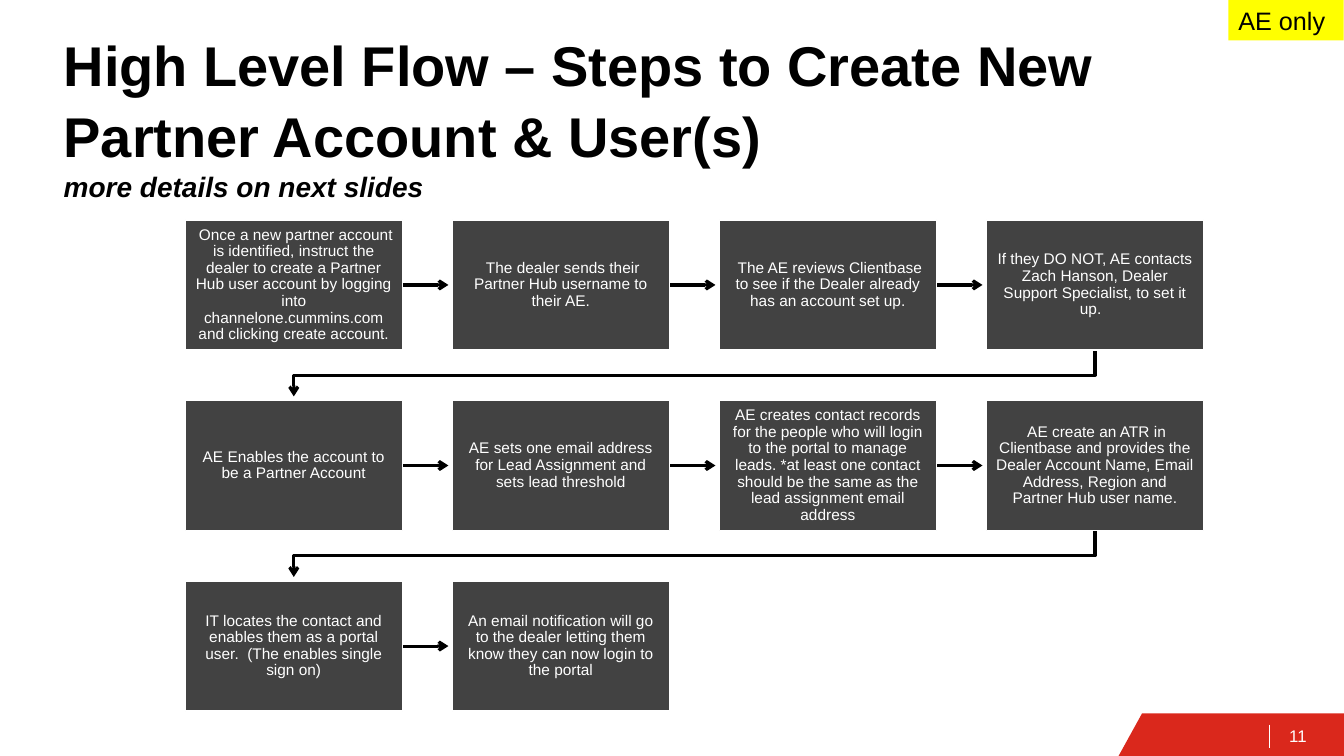
"""Build the partner account flow slide: ten steps in rows joined by arrows."""
from pptx import Presentation
from pptx.dml.color import RGBColor
from pptx.enum.shapes import MSO_CONNECTOR, MSO_SHAPE
from pptx.enum.text import MSO_ANCHOR, MSO_AUTO_SIZE, PP_ALIGN
from pptx.oxml.ns import qn
from pptx.util import Cm, Pt
from lxml.etree import SubElement

BLACK = RGBColor(0x00, 0x00, 0x00)
WHITE = RGBColor(0xFF, 0xFF, 0xFF)
GREY = RGBColor(0x42, 0x42, 0x42)
RED = RGBColor(0xDA, 0x28, 0x1C)
YELLOW = RGBColor(0xFF, 0xFF, 0x00)

STEPS = [
    " Once a new partner account is identified, instruct the dealer to create a Partner Hub user account "
    "by logging into channelone.cummins.com and clicking create account.",
    " The dealer sends their Partner Hub username to their AE.",
    " The AE reviews Clientbase to see if the Dealer already has an account set up.",
    "If they DO NOT, AE contacts Zach Hanson, Dealer Support Specialist, to set it up.  ",
    "AE Enables the account to be a Partner Account",
    "AE sets one email address for Lead Assignment and sets lead threshold",
    "AE creates contact records for the people who will login to the portal to manage leads. "
    "*at least one contact should be the same as the lead assignment email address",
    " AE create an ATR in Clientbase and provides the Dealer Account Name, Email Address, "
    "Region and Partner Hub user name.",
    "IT locates the contact and enables them as a portal user.  (The enables single sign on)",
    "An email notification will go to the dealer letting them know they can now login to the portal",
]
COLS = 4
LEFT, TOP = 4.67, 5.54
BOX_W, BOX_H = 5.47, 3.28
STEP_X, STEP_Y = 6.73, 4.55
TIP_GAP = 0.1


def add_text(p, text, size, color, bold=None, italic=None):
    r = p.add_run()
    r.text = text
    r.font.name = "Arial"
    r.font.size = Pt(size)
    r.font.color.rgb = color
    r.font.bold = bold
    r.font.italic = italic


def style_line(sp, color, width, arrow=False):
    sp.line.color.rgb = color
    sp.line.width = Pt(width)
    if arrow:
        SubElement(sp.line._get_or_add_ln(), qn("a:tailEnd"), type="arrow")
    SubElement(sp._element.spPr, qn("a:effectLst"))


prs = Presentation()
prs.slide_width, prs.slide_height = Cm(33.87), Cm(19.05)
s = prs.slides.add_slide(prs.slide_layouts[5])

fb = s.shapes.build_freeform(Cm(28.19), Cm(19.05))
fb.add_line_segments([(Cm(28.78), Cm(17.98)), (Cm(33.87), Cm(17.98)), (Cm(33.87), Cm(19.05))])
footer = fb.convert_to_shape()
footer.shadow.inherit = False
footer.fill.solid()
footer.fill.fore_color.rgb = RED
footer.line.fill.background()

number = s.shapes.add_textbox(Cm(32.16), Cm(18.03), Cm(1.7), Cm(1.02))
tf = number.text_frame
tf.word_wrap = True
tf.vertical_anchor = MSO_ANCHOR.MIDDLE
tf.margin_left = tf.margin_right = Cm(0.33)
tf.margin_top = tf.margin_bottom = Cm(0.18)
add_text(tf.paragraphs[0], "11", 12, WHITE)

divider = s.shapes.add_connector(MSO_CONNECTOR.STRAIGHT, Cm(32), Cm(18.26), Cm(32), Cm(18.85))
style_line(divider, WHITE, 0.75)

title = s.shapes.title
title.left, title.top, title.width, title.height = Cm(1.35), Cm(0.56), Cm(26.64), Cm(2.46)
tf = title.text_frame
tf.word_wrap = True
tf.auto_size = MSO_AUTO_SIZE.NONE
tf.vertical_anchor = MSO_ANCHOR.TOP
p = tf.paragraphs[0]
p.alignment = PP_ALIGN.LEFT
p.line_spacing = 1.05
add_text(p, "High Level Flow – Steps to Create New Partner Account & User(s)", 40, BLACK, bold=True)
p.add_line_break()
add_text(p, "more details on next slides", 20, BLACK, bold=True, italic=True)

for i, step in enumerate(STEPS):
    row, col = divmod(i, COLS)
    x, y = LEFT + col * STEP_X, TOP + row * STEP_Y
    if i < len(STEPS) - 1:
        if col < COLS - 1:
            mid_y = Cm(y + BOX_H / 2)
            arrow = s.shapes.add_connector(
                MSO_CONNECTOR.STRAIGHT, Cm(x + BOX_W), mid_y, Cm(x + STEP_X - TIP_GAP), mid_y)
        else:
            start_x, end_x = Cm(x + BOX_W / 2), Cm(LEFT + BOX_W / 2)
            bend_y = Cm(y + (BOX_H + STEP_Y) / 2)
            fb = s.shapes.build_freeform(start_x, Cm(y + BOX_H))
            fb.add_line_segments(
                [(start_x, bend_y), (end_x, bend_y), (end_x, Cm(y + STEP_Y - TIP_GAP))], close=False)
            arrow = fb.convert_to_shape()
            arrow.fill.background()
        style_line(arrow, BLACK, 2.25, arrow=True)

    box = s.shapes.add_shape(MSO_SHAPE.RECTANGLE, Cm(x), Cm(y), Cm(BOX_W), Cm(BOX_H))
    box.shadow.inherit = False
    box.fill.solid()
    box.fill.fore_color.rgb = GREY
    box.line.color.rgb = WHITE
    box.line.width = Pt(1)
    tf = box.text_frame
    tf.word_wrap = True
    tf.vertical_anchor = MSO_ANCHOR.MIDDLE
    tf.margin_left = tf.margin_right = tf.margin_top = tf.margin_bottom = Cm(0.23)
    p = tf.paragraphs[0]
    p.alignment = PP_ALIGN.CENTER
    p.line_spacing = 0.9
    add_text(p, step, 11, WHITE)

tag = s.shapes.add_shape(MSO_SHAPE.RECTANGLE, Cm(30.96), Cm(0), Cm(2.9), Cm(1.02))
tag.shadow.inherit = False
tag.fill.solid()
tag.fill.fore_color.rgb = YELLOW
tag.line.fill.background()
tf = tag.text_frame
tf.word_wrap = False
tf.vertical_anchor = MSO_ANCHOR.TOP
p = tf.paragraphs[0]
p.alignment = PP_ALIGN.LEFT
add_text(p, "AE only", 18, BLACK)

prs.save("out.pptx")
